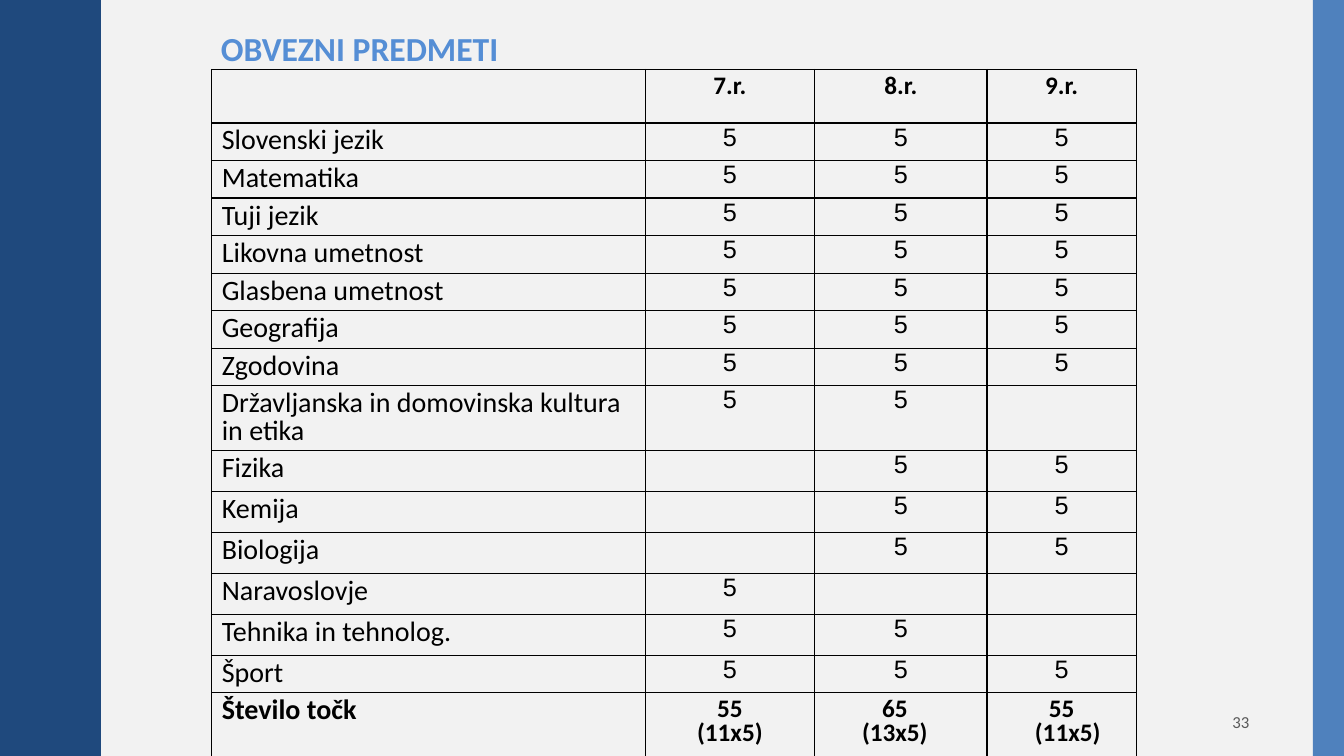
import dataclasses

import lxml.etree
import pptx
import pptx.dml.color
import pptx.enum.shapes
import pptx.enum.text
import pptx.oxml
import pptx.oxml.ns
import pptx.util

Inches = pptx.util.Inches
RGBColor = pptx.dml.color.RGBColor
Align = pptx.enum.text.PP_ALIGN
Anchor = pptx.enum.text.MSO_ANCHOR

PAPER = RGBColor(0xF2, 0xF2, 0xF2)
NAVY = RGBColor(0x1F, 0x49, 0x7D)
BLUE = RGBColor(0x4F, 0x81, 0xBD)
SKY = RGBColor(0x55, 0x8E, 0xD5)
GREY = RGBColor(0x59, 0x59, 0x59)
BLACK = RGBColor(0, 0, 0)

NAME = dict(name="Calibri", size=20, bold=False, color=BLACK)
MARK = dict(name="Arial", size=18, bold=False, color=BLACK)
HEAD = dict(name="Calibri", size=18, bold=True, color=BLACK)
TOTAL = NAME | dict(bold=True)

PERIOD = 1.5
RISE = [(0.78, 0), (0.78, 0.07), (0.79, 0.14), (0.8, 0.2), (0.81, 0.25),
        (0.83, 0.29), (0.91, 0.46), (0.93, 0.5), (0.95, 0.55),
        (0.96, 0.61), (0.97, 0.68), (0.97, 0.75)]
COLS = [4.3, 1.68, 1.71, 1.48]
GRADES = "789"


@dataclasses.dataclass
class Course:
    name: str
    grades: str = GRADES
    height: float = 0.37


@dataclasses.dataclass
class Sum:
    points: str
    count: str
    left: float = 0
    right: float = 0


COURSES = [
    Course("Slovenski jezik"),
    Course("Matematika"),
    Course("Tuji jezik"),
    Course("Likovna umetnost"),
    Course("Glasbena umetnost"),
    Course("Geografija"),
    Course("Zgodovina"),
    Course("Državljanska in domovinska kultura in etika", "78", 0.63),
    Course("Fizika", "89", 0.38),
    Course("Kemija", "89", 0.38),
    Course("Biologija", "89", 0.38),
    Course("Naravoslovje", "7", 0.38),
    Course("Tehnika in tehnolog.", "78", 0.38),
    Course("Šport"),
]
SUMS = [Sum("55", "(11x5)"), Sum("65", "(13x5)", right=0.12),
        Sum("55", "(11x5)", left=0.12)]


def style(font, form: dict) -> None:
    for key, value in form.items():
        if key == "color":
            font.color.rgb = value
        else:
            setattr(font, key, pptx.util.Pt(value) if key == "size" else value)


def write(para, text: str, form: dict, align=Align.LEFT, space: float = 1) -> None:
    run = para.add_run()
    run.text = text
    style(run.font, form)
    para.alignment = align
    para.line_spacing = space


def paint(shape, color: RGBColor) -> None:
    shape.shadow.inherit = False
    shape.fill.solid()
    shape.fill.fore_color.rgb = color
    shape.line.fill.background()


def draw_wave(slide) -> None:
    fall = [(x, PERIOD - y) for x, y in reversed(RISE[1:-1])]
    edge = [(x, y + turn * PERIOD) for turn in range(5) for x, y in RISE + fall]
    points = [*edge, (0.78, 7.5), (0, 7.5)]
    form = slide.shapes.build_freeform(0, 0, scale=Inches(1))
    form.add_line_segments(points, close=True)
    paint(form.convert_to_shape(), NAVY)


def frame(cell) -> None:
    """Clear the fill of a cell and rule its four sides."""
    cell.fill.background()
    props = cell._tc.get_or_add_tcPr()
    for spot, side in enumerate("LRTB"):
        line = pptx.oxml.parse_xml(
            f'<a:ln{side} {pptx.oxml.ns.nsdecls("a")} w="12700"><a:solidFill>'
            f'<a:srgbClr val="{BLACK}"/></a:solidFill></a:ln{side}>')
        props.insert(spot, line)


def fill_cell(cell, text: str, form: dict, align=Align.CENTER) -> None:
    write(cell.text_frame.paragraphs[0], text, form, align, 0.8)


def draw_table(slide) -> None:
    rows = [0.53, *(course.height for course in COURSES), 0.74]
    shape = slide.shapes.add_table(
        len(rows), len(COLS), Inches(2.1), Inches(0.69),
        Inches(sum(COLS)), Inches(sum(rows)))
    table = shape.table
    table.first_row = table.horz_banding = False
    for col, width in zip(table.columns, COLS):
        col.width = Inches(width)
    for row, height in zip(table.rows, rows):
        row.height = Inches(height)
    for cell in table.iter_cells():
        frame(cell)

    last = len(rows) - 1
    for col, grade in enumerate(GRADES, 1):
        fill_cell(table.cell(0, col), f"{grade}.r.", HEAD)
    for row, course in enumerate(COURSES, 1):
        fill_cell(table.cell(row, 0), course.name, NAME, Align.LEFT)
        for col, grade in enumerate(GRADES, 1):
            if grade in course.grades:
                fill_cell(table.cell(row, col), "5", MARK)
    fill_cell(table.cell(last, 0), "Število točk", TOTAL, Align.LEFT)
    for col, item in enumerate(SUMS, 1):
        cell = table.cell(last, col)
        fill_cell(cell, item.points, HEAD)
        count = cell.text_frame.add_paragraph()
        write(count, item.count, HEAD, Align.CENTER, 0.8)
        first = cell.text_frame.paragraphs[0]
        first._p.get_or_add_pPr().set("marR", str(Inches(item.right)))
        count._p.get_or_add_pPr().set("marL", str(Inches(item.left)))


def draw_title(slide) -> None:
    title = slide.shapes.title
    box = dict(left=2.09, top=0.23, width=3.4, height=0.91)
    for key, value in box.items():
        setattr(title, key, Inches(value))
    title.text_frame.vertical_anchor = Anchor.TOP
    form = dict(name="Calibri", size=24, bold=True, color=SKY)
    write(title.text_frame.paragraphs[0], "OBVEZNI PREDMETI", form)


def draw_number(slide) -> None:
    box = slide.shapes.add_textbox(
        Inches(9.41), Inches(6.97), Inches(3.08), Inches(0.38))
    box.text_frame.word_wrap = True
    box.text_frame.vertical_anchor = Anchor.MIDDLE
    form = dict(name="Calibri", size=12, color=GREY)
    write(box.text_frame.paragraphs[0], "33", form, Align.RIGHT)


def main() -> None:
    deck = pptx.Presentation()
    deck.slide_width, deck.slide_height = Inches(13.33), Inches(7.5)
    slide = deck.slides.add_slide(deck.slide_layouts[5])
    slide.background.fill.solid()
    slide.background.fill.fore_color.rgb = PAPER
    draw_wave(slide)
    bar = slide.shapes.add_shape(
        pptx.enum.shapes.MSO_SHAPE.RECTANGLE,
        Inches(13.02), 0, Inches(0.31), Inches(7.5))
    paint(bar, BLUE)
    draw_title(slide)
    draw_table(slide)
    draw_number(slide)
    deck.save("out.pptx")


if __name__ == "__main__":
    main()
